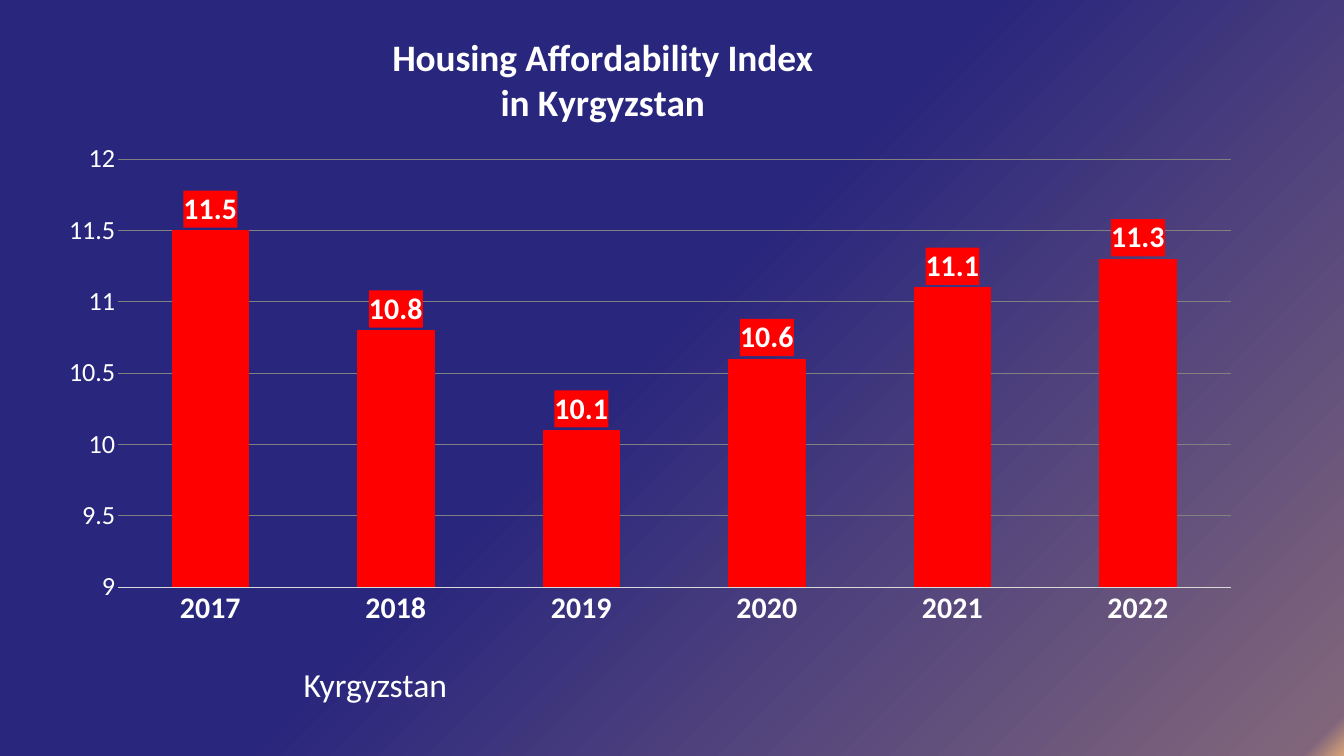
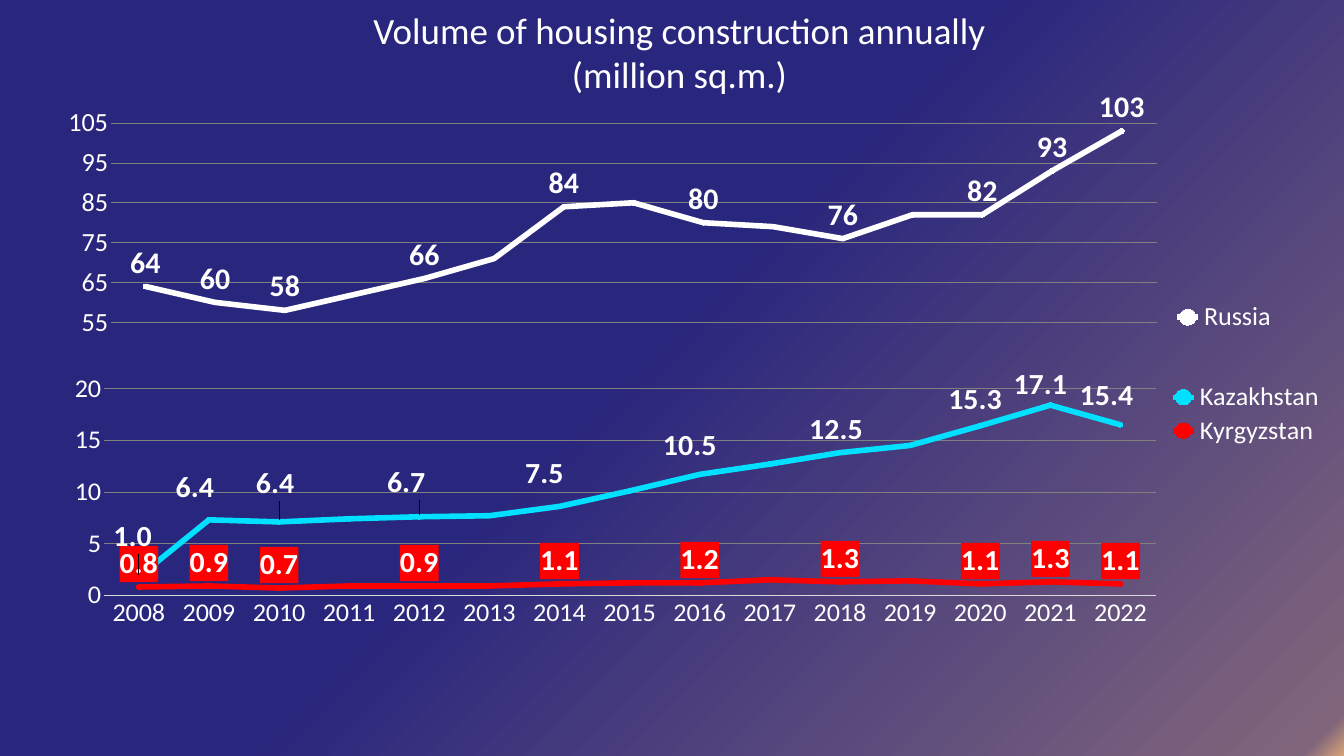
from copy import deepcopy
from dataclasses import dataclass

from pptx import Presentation
from pptx import util as u
from pptx.chart.data import CategoryChartData
from pptx.dml.color import RGBColor
from pptx.enum import chart as ch
from pptx.enum import text
from pptx.oxml import parse_xml
from pptx.oxml.ns import nsdecls, qn


@dataclass(frozen=True)
class Theme:
    font: str = "Calibri"
    white: str = "FFFFFF"
    red: str = "FF0000"
    cyan: str = "01E1FF"
    grid: str = "808080"
    axis: str = "D9D9D9"
    backdrop: tuple = ((0, "D8A578"), (2, "81667B"), (53, "29267D"))
    backdrop_angle: int = 135
    heading: float = 40
    title: float = 39.6
    caption: float = 36
    label: float = 32
    tick: float = 28
    hairline: float = 0.75
    curve: float = 6


T = Theme()
YEARS = [str(year) for year in range(2008, 2023)]
UNLABELLED = range(3, 12, 2)
KAZAKH_SHIFTS = {
    0: (-6, -18), 1: (-14, -10), 2: (-4, -16), 4: (-13, -12), 6: (-15, -10),
    8: (-10, -6), 10: (-4, 0), 12: (-5, -3), 13: (-10, 3), 14: (-14, -6),
}


def px(n):
    return u.Emu(round(n * 914400 / 67.2))


def put(obj, **values):
    for name, value in values.items():
        setattr(obj, name, value)


def style_font(font, size, bold=False):
    put(font, name=T.font, size=u.Pt(size), bold=bold)
    font.color.rgb = RGBColor.from_string(T.white)


def style_line(line, color, width):
    line.color.rgb = RGBColor.from_string(color)
    line.width = u.Pt(width)


def add_slide(prs):
    s = prs.slides.add_slide(prs.slide_layouts[6])
    fill = s.background.fill
    fill.gradient()
    fill.gradient_angle = T.backdrop_angle
    stops = s.element.find(".//" + qn("a:gsLst"))
    for stop in list(stops):
        stops.remove(stop)
    for pos, color in T.backdrop:
        stops.append(parse_xml(
            f'<a:gs {nsdecls("a")} pos="{pos * 1000}"><a:srgbClr val="{color}"/></a:gs>'))
    return s


def add_text(s, box, lines, size, **paragraph_format):
    sp = s.shapes.add_textbox(*map(px, box))
    tf = sp.text_frame
    put(tf, word_wrap=True, vertical_anchor=text.MSO_ANCHOR.MIDDLE)
    p = tf.paragraphs[0]
    put(p, **paragraph_format)
    for i, line in enumerate(lines):
        if i:
            p.add_line_break()
        r = p.add_run()
        r.text = line
        style_font(r.font, size)


def layout_xml(mode="", **sizes):
    parts = "".join(f'<c:{k} val="{v:.4f}"/>' for k, v in sizes.items())
    return parse_xml(f'<c:layout {nsdecls("c")}><c:manualLayout>{mode}{parts}'
                     '</c:manualLayout></c:layout>')


def place(element, inner=False, **sizes):
    old = element.find(qn("c:layout"))
    if old is not None:
        element.remove(old)
    mode = '<c:layoutTarget val="inner"/>' if inner else ""
    mode += '<c:xMode val="edge"/><c:yMode val="edge"/>'
    layout = layout_xml(mode, **sizes)
    overlay = element.find(qn("c:overlay"))
    if overlay is None:
        element.insert(0, layout)
    else:
        overlay.addprevious(layout)


def add_chart(s, kind, box, cats, series, plot):
    data = CategoryChartData()
    data.categories = cats
    for name, values in series:
        data.add_series(name, values)
    chart = s.shapes.add_chart(kind, *map(px, box), data).chart
    put(chart, has_title=False, has_legend=False)
    style_font(chart.font, T.tick)
    chart.plots[0].vary_by_categories = False
    place(chart.element.find(".//" + qn("c:plotArea")), True, **dict(zip("xywh", plot)))
    return chart


def style_axes(chart, low, high, step, number_format, cat_size=T.tick, cat_bold=False):
    none = ch.XL_TICK_MARK.NONE
    values, cats = chart.value_axis, chart.category_axis
    put(values, minimum_scale=low, maximum_scale=high, major_unit=step,
        major_tick_mark=none, minor_tick_mark=none, has_major_gridlines=True)
    put(values.tick_labels, number_format=number_format, number_format_is_linked=False)
    style_font(values.tick_labels.font, T.tick)
    values.format.line.fill.background()
    style_line(values.major_gridlines.format.line, T.grid, T.hairline)
    put(cats, major_tick_mark=none, minor_tick_mark=none)
    style_font(cats.tick_labels.font, cat_size, cat_bold)
    style_line(cats.format.line, T.axis, T.hairline)


def label_series(ser, number_format, position, fill=None):
    labels = ser.data_labels
    put(labels, show_value=True, number_format=number_format,
        number_format_is_linked=False, position=position)
    style_font(labels.font, T.label, True)
    element = ser._element.find(qn("c:dLbls"))
    if fill:
        element.find(qn("c:txPr")).addprevious(parse_xml(
            f'<c:spPr {nsdecls("c", "a")}><a:solidFill><a:srgbClr val="{fill}"/>'
            '</a:solidFill></c:spPr>'))
    return element


def adjust_labels(labels, hidden, shifts, size):
    shared = [e for e in labels if e.tag != qn("c:showLeaderLines")]
    for place_no, i in enumerate(sorted({*hidden, *shifts})):
        label = parse_xml(f'<c:dLbl {nsdecls("c")}><c:idx val="{i}"/></c:dLbl>')
        if i in shifts:
            dx, dy = shifts[i]
            label.append(layout_xml(x=dx / size[0], y=dy / size[1]))
            label.extend(deepcopy(shared))
        else:
            label.append(parse_xml(f'<c:delete {nsdecls("c")} val="1"/>'))
        labels.insert(place_no, label)


def style_curve(ser, color, number_format, size, fill=None, shifts=None):
    ser.smooth = False
    style_line(ser.format.line, color, T.curve)
    put(ser.marker, style=ch.XL_MARKER_STYLE.CIRCLE, size=5)
    ser.marker.format.fill.solid()
    ser.marker.format.fill.fore_color.rgb = RGBColor.from_string(color)
    style_line(ser.marker.format.line, color, T.hairline)
    labels = label_series(ser, number_format, ch.XL_LABEL_POSITION.ABOVE, fill)
    adjust_labels(labels, UNLABELLED, shifts or {}, size)


def add_legend(chart, **sizes):
    chart.has_legend = True
    put(chart.legend, position=ch.XL_LEGEND_POSITION.RIGHT, include_in_layout=False)
    style_font(chart.legend.font, T.tick)
    place(chart.element.find(".//" + qn("c:legend")), **sizes)


def add_chart_title(chart, lines, **sizes):
    chart.has_title = True
    tf = chart.chart_title.text_frame
    for i, line in enumerate(lines):
        p = tf.add_paragraph() if i else tf.paragraphs[0]
        r = p.add_run()
        r.text = line
        style_font(r.font, T.heading, True)
    place(chart.element.find(".//" + qn("c:title")), **sizes)


def affordability_slide(prs):
    s = add_slide(prs)
    chart = add_chart(
        s, ch.XL_CHART_TYPE.COLUMN_CLUSTERED, (38, 19, 1305, 711), YEARS[-6:],
        [("Series 1", (11.5, 10.8, 10.1, 10.6, 11.1, 11.3))],
        (0.061, 0.197, 0.853, 0.602))
    style_axes(chart, 9, 12, 0.5, "General", T.label, True)
    put(chart.plots[0], gap_width=139, overlap=-27)
    ser = chart.plots[0].series[0]
    ser.format.fill.solid()
    ser.format.fill.fore_color.rgb = RGBColor.from_string(T.red)
    label_series(ser, "0.0", ch.XL_LABEL_POSITION.OUTSIDE_END, T.red)
    add_chart_title(chart, ("Housing Affordability Index", "in Kyrgyzstan"), x=0.27, y=0.02)
    add_text(s, (297, 658, 235, 52), ["Kyrgyzstan"], T.caption)


def construction_slide(prs):
    s = add_slide(prs)
    add_text(s, (257, 20, 845, 63),
             ("Volume of housing construction annually", "(million sq.m.)"),
             T.title, alignment=text.PP_ALIGN.CENTER)
    kind = ch.XL_CHART_TYPE.LINE_MARKERS_STACKED

    box = (0, 83, 1316, 284)
    russia = add_chart(
        s, kind, box, [str(n) for n in range(1, 16)],
        [("Russia", (64, 60, 58, 62, 66, 71, 84, 85, 80, 79, 76, 82, 82, 93, 103))],
        (0.084, 0.071, 0.795, 0.772))
    style_axes(russia, 55, 110, 10, "0")
    russia.category_axis.visible = False
    style_curve(russia.plots[0].series[0], T.white, "0", box[2:])
    add_legend(russia, x=0.88, y=0.76, w=0.1, h=0.13)

    box = (-11, 367, 1366, 274)
    neighbours = add_chart(
        s, kind, box, YEARS,
        [("Kyrgyzstan", (0.8, 0.9, 0.7, 0.9, 0.9, 0.9, 1.1, 1.2, 1.2, 1.5,
                         1.3, 1.4, 1.1, 1.3, 1.1)),
         ("Kazakhstan", (1.0, 6.4, 6.4, 6.5, 6.7, 6.8, 7.5, 8.9, 10.5, 11.2,
                         12.5, 13.1, 15.3, 17.1, 15.4))],
        (0.084, 0.055, 0.77, 0.774))
    style_axes(neighbours, 0, 20, 5, "0")
    kyrgyz, kazakh = neighbours.plots[0].series
    style_curve(kyrgyz, T.red, "0.0", box[2:], fill=T.red)
    style_curve(kazakh, T.cyan, "0.0", box[2:], shifts=KAZAKH_SHIFTS)
    add_legend(neighbours, x=0.86, y=0.02, w=0.12, h=0.26)


def main():
    prs = Presentation()
    put(prs, slide_width=px(1344), slide_height=px(756))
    affordability_slide(prs)
    construction_slide(prs)
    prs.save("out.pptx")


if __name__ == "__main__":
    main()
